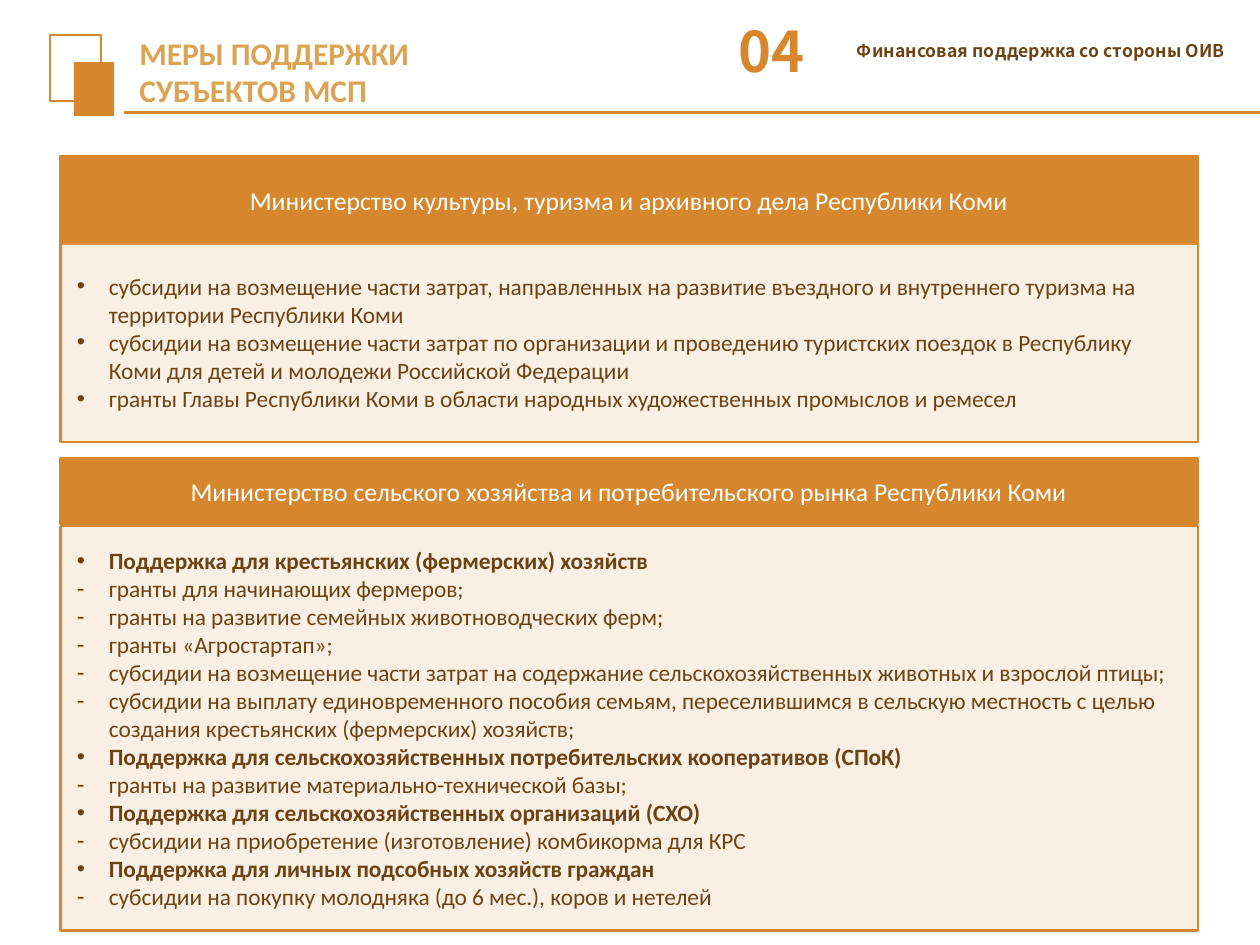
from lxml import etree
from pptx import Presentation
from pptx.dml.color import RGBColor
from pptx.enum.shapes import MSO_CONNECTOR, MSO_SHAPE
from pptx.enum.text import MSO_ANCHOR, MSO_AUTO_SIZE, PP_ALIGN
from pptx.oxml.ns import qn
from pptx.util import Inches, Pt

RECTANGLE = MSO_SHAPE.RECTANGLE
STRAIGHT = MSO_CONNECTOR.STRAIGHT
MIDDLE = MSO_ANCHOR.MIDDLE
LEFT, CENTER = PP_ALIGN.LEFT, PP_ALIGN.CENTER
NO_AUTOFIT = MSO_AUTO_SIZE.NONE

ORANGE = RGBColor(0xD6, 0x86, 0x2D)
GOLD = RGBColor(0xDA, 0xA4, 0x54)
SAND = RGBColor(0xE7, 0xC2, 0x8D)
BROWN = RGBColor(0x6C, 0x43, 0x15)
WHITE = RGBColor(0xFF, 0xFF, 0xFF)

BODY_FONT = "Calibri"
LABEL_FONT = "Noto Sans CJK SC"
SLIDE_WIDTH = 7.5
SLIDE_HEIGHT = SLIDE_WIDTH * 3 / 4
CARD_LEFT, CARD_WIDTH = 0.36, 6.77
HANGING = 0.19

CULTURE = [
    ("•", "субсидии на возмещение части затрат, направленных на развитие въездного и "
          "внутреннего туризма на территории Республики Коми"),
    ("•", "субсидии на возмещение части затрат по организации и проведению туристских "
          "поездок в Республику Коми для детей и молодежи Российской Федерации"),
    ("•", "гранты Главы Республики Коми в области народных художественных промыслов и ремесел"),
]
FARMING_GROUPS = [
    ("Поддержка для крестьянских (фермерских) хозяйств", [
        "гранты для начинающих фермеров;",
        "гранты на развитие семейных животноводческих ферм;",
        "гранты «Агростартап»;",
        "субсидии на возмещение части затрат на содержание сельскохозяйственных животных "
        "и взрослой птицы;",
        "субсидии на выплату единовременного пособия семьям, переселившимся в сельскую "
        "местность с целью создания крестьянских (фермерских) хозяйств;",
    ]),
    ("Поддержка для сельскохозяйственных потребительских кооперативов (СПоК)",
     ["гранты на развитие материально-технической базы;"]),
    ("Поддержка для сельскохозяйственных организаций (СХО)",
     ["субсидии на приобретение (изготовление) комбикорма для КРС"]),
    ("Поддержка для личных подсобных хозяйств граждан",
     ["субсидии на покупку молодняка (до 6 мес.), коров и нетелей"]),
]


class SlideBuilder:
    def __init__(self, slide):
        self.slide = slide

    def style(self, paragraph, size, color, bold=False, font=BODY_FONT, align=LEFT):
        paragraph.alignment = align
        for run in paragraph.runs:
            run.font.name = font
            run.font.size = Pt(size)
            run.font.bold = bold
            run.font.color.rgb = color

    def title(self, text, left, top, width, height):
        shape = self.slide.shapes.title
        shape.left, shape.top = Inches(left), Inches(top)
        shape.width, shape.height = Inches(width), Inches(height)
        frame = shape.text_frame
        frame.text = text
        frame.word_wrap = True
        frame.auto_size = NO_AUTOFIT
        frame.vertical_anchor = MIDDLE
        self.style(frame.paragraphs[0], 13.5, GOLD, bold=True)

    def rectangle(self, left, top, width, height, fill=None, line=None, weight=1, opacity=100):
        shape = self.slide.shapes.add_shape(
            RECTANGLE, Inches(left), Inches(top), Inches(width), Inches(height))
        shape.shadow.inherit = False
        if fill is None:
            shape.fill.background()
        else:
            shape.fill.solid()
            shape.fill.fore_color.rgb = fill
        if opacity < 100:
            color = shape._element.spPr.find(qn("a:solidFill")).find(qn("a:srgbClr"))
            etree.SubElement(color, qn("a:alpha"), val=str(opacity * 1000))
        if line is None:
            shape.line.fill.background()
        else:
            shape.line.color.rgb = line
            shape.line.width = Pt(weight)
        return shape

    def rule(self, left, right, y):
        connector = self.slide.shapes.add_connector(
            STRAIGHT, Inches(left), Inches(y), Inches(right), Inches(y))
        connector.line.color.rgb = ORANGE
        connector.line.width = Pt(1.25)
        etree.SubElement(connector._element.spPr, qn("a:effectLst"))

    def label(self, text, left, top, width, height, size, color, wrap=True, align=CENTER):
        box = self.slide.shapes.add_textbox(
            Inches(left), Inches(top), Inches(width), Inches(height))
        box.text_frame.word_wrap = wrap
        box.text_frame.text = text
        self.style(box.text_frame.paragraphs[0], size, color, True, LABEL_FONT, align)

    def bullet(self, paragraph, mark):
        properties = paragraph._p.get_or_add_pPr()
        properties.set("marL", str(Inches(HANGING)))
        properties.set("indent", str(-Inches(HANGING)))
        etree.SubElement(properties, qn("a:buFont"), typeface="Arial")
        etree.SubElement(properties, qn("a:buChar"), char=mark)

    def card(self, heading, items, top, heading_height, body_top, body_height):
        """Draw a heading bar over a list; items are (mark, text) or (mark, text, bold)."""
        bar = self.rectangle(CARD_LEFT, top, CARD_WIDTH, heading_height, ORANGE, ORANGE)
        bar.text_frame.word_wrap = True
        bar.text_frame.vertical_anchor = MIDDLE
        bar.text_frame.text = heading
        self.style(bar.text_frame.paragraphs[0], 11, WHITE, align=CENTER)

        body = self.rectangle(CARD_LEFT, body_top, CARD_WIDTH, body_height,
                              SAND, ORANGE, opacity=24)
        frame = body.text_frame
        frame.word_wrap = True
        frame.vertical_anchor = MIDDLE
        frame.text = "\n".join(item[1] for item in items)
        for paragraph, (mark, _, *bold) in zip(frame.paragraphs, items):
            self.style(paragraph, 10, BROWN, bold=any(bold))
            self.bullet(paragraph, mark)


def main():
    presentation = Presentation()
    presentation.slide_width = Inches(SLIDE_WIDTH)
    presentation.slide_height = Inches(SLIDE_HEIGHT)
    slide = presentation.slides.add_slide(presentation.slide_layouts[5])
    builder = SlideBuilder(slide)

    builder.rectangle(0.3, 0.21, 0.3, 0.39, line=ORANGE, weight=0.75)
    builder.rectangle(0.44, 0.37, 0.24, 0.32, fill=ORANGE)
    builder.rule(0.74, SLIDE_WIDTH, 0.67)
    builder.title("МЕРЫ ПОДДЕРЖКИ СУБЪЕКТОВ МСП", 0.73, 0.21, 2.67, 0.43)
    builder.label("04", 4.3, 0.05, 0.62, 0.5, 24, ORANGE, wrap=False, align=LEFT)
    builder.label("Финансовая поддержка со стороны ОИВ", 4.77, 0.19, 2.85, 0.23, 7.5, BROWN)

    farming = []
    for group, measures in FARMING_GROUPS:
        farming.append(("•", group, True))
        farming.extend(("-", measure) for measure in measures)
    builder.card("Министерство культуры, туризма и архивного дела Республики Коми",
                 CULTURE, 0.93, 0.52, 1.44, 1.19)
    builder.card("Министерство сельского хозяйства и потребительского рынка Республики Коми",
                 farming, 2.73, 0.39, 3.13, 2.41)
    presentation.save("out.pptx")


if __name__ == "__main__":
    main()
